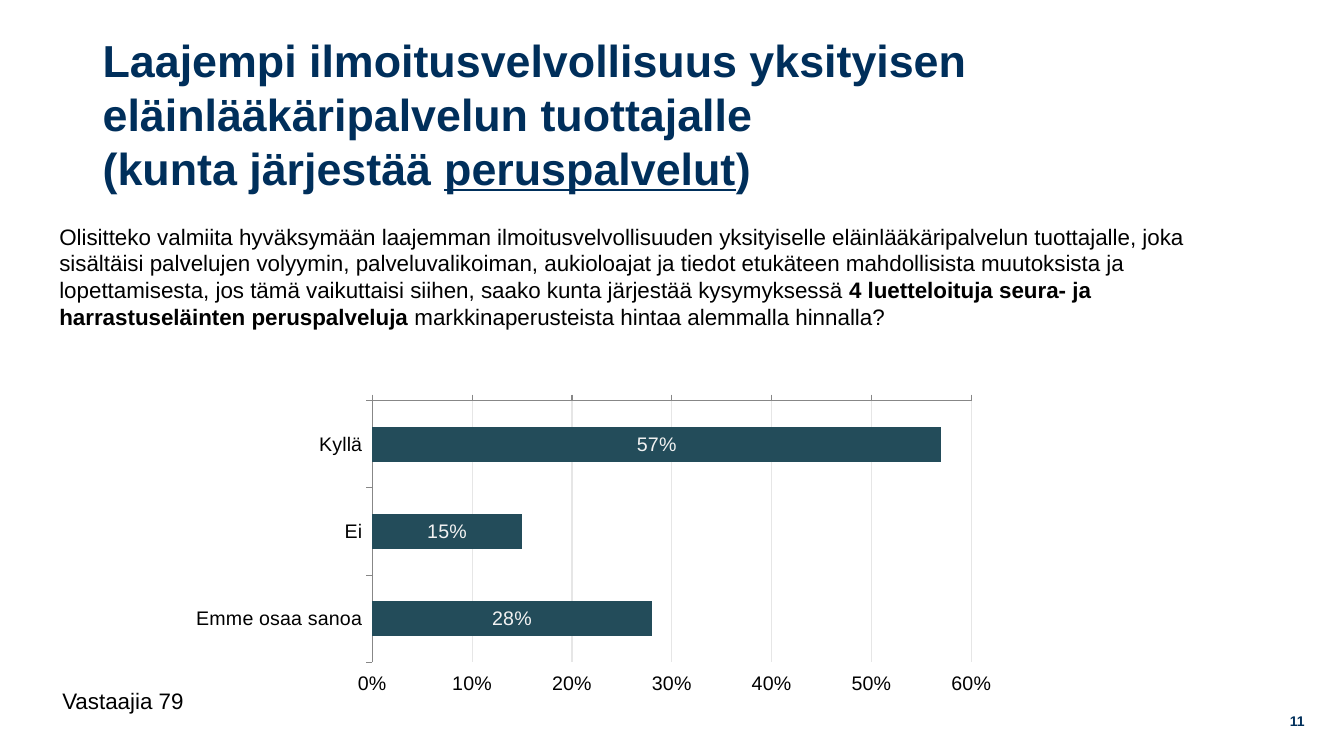
from dataclasses import dataclass

from pptx import Presentation
from pptx.chart.data import CategoryChartData
from pptx.dml.color import RGBColor as Rgb
from pptx.enum import chart as ch, text as tx
from pptx.util import Pt


@dataclass(frozen=True)
class Theme:
    """Colours and type sizes of the slide."""
    font: str = "Arial"
    navy: Rgb = Rgb(0x00, 0x2F, 0x5B)
    black: Rgb = Rgb(0, 0, 0)
    teal: Rgb = Rgb(0x23, 0x4C, 0x5A)
    pale: Rgb = Rgb(0xF2, 0xF2, 0xF2)
    grid: Rgb = Rgb(0xE6, 0xE6, 0xE6)
    axis: Rgb = Rgb(0x87, 0x87, 0x87)
    white: Rgb = Rgb(0xFF, 0xFF, 0xFF)
    head: float = 32
    body: float = 16
    label: float = 14
    small: float = 10


THEME = Theme()


def style(font, size, color, bold=None):
    """Set the face, size, colour and weight of a font."""
    font.name, font.size, font.bold = THEME.font, Pt(size), bold
    font.color.rgb = color


def frame(slide, box, size, color, bold=None, middle=False):
    """Add a wrapped text box and return its first paragraph."""
    area = slide.shapes.add_textbox(*map(Pt, box)).text_frame
    area.word_wrap = True
    area.vertical_anchor = tx.MSO_ANCHOR.MIDDLE if middle else tx.MSO_ANCHOR.TOP
    para = area.paragraphs[0]
    style(para.font, size, color, bold)
    return para


def add_run(para, words):
    """Append words to a paragraph and return the run."""
    run = para.add_run()
    run.text = words
    return run


def add_title(slide, box):
    """Add the heading with its underlined key word."""
    para = frame(slide, box, THEME.head, THEME.navy, True, True)
    add_run(para, "Laajempi ilmoitusvelvollisuus yksityisen eläinlääkäripalvelun tuottajalle")
    para.add_line_break()
    add_run(para, "(kunta järjestää ")
    add_run(para, "peruspalvelut").font.underline = True
    add_run(para, ")")


def add_query(slide, box):
    """Add the survey question with its bold passage."""
    para = frame(slide, box, THEME.body, THEME.black)
    add_run(para, "Olisitteko valmiita hyväksymään laajemman ilmoitusvelvollisuuden "
            "yksityiselle eläinlääkäripalvelun tuottajalle, joka sisältäisi palvelujen "
            "volyymin, palveluvalikoiman, aukioloajat ja tiedot etukäteen mahdollisista "
            "muutoksista ja lopettamisesta, jos tämä vaikuttaisi siihen, saako kunta "
            "järjestää kysymyksessä ")
    add_run(para, "4 luetteloituja seura- ja harrastuseläinten peruspalveluja").font.bold = True
    add_run(para, " markkinaperusteista hintaa alemmalla hinnalla?")


def add_bars(slide, box):
    """Add the bar chart of answer shares."""
    data = CategoryChartData(number_format="0%")
    data.categories = ["Kyllä", "Ei", "Emme osaa sanoa"]
    data.add_series("Series 1", [0.57, 0.15, 0.28])
    chart = slide.shapes.add_chart(ch.XL_CHART_TYPE.BAR_CLUSTERED, *map(Pt, box), data).chart
    chart.has_legend = chart.has_title = False
    style(chart.font, THEME.label, THEME.black)

    cat, val = chart.category_axis, chart.value_axis
    cat.reverse_order = True
    for axis in (cat, val):
        axis.major_tick_mark = ch.XL_TICK_MARK.OUTSIDE
        axis.format.line.color.rgb = THEME.axis
        axis.format.line.width = Pt(0.75)
    val.minimum_scale, val.maximum_scale, val.major_unit = 0, 0.6, 0.1
    val.tick_label_position = ch.XL_TICK_LABEL_POSITION.HIGH
    val.tick_labels.number_format = "0%"
    val.tick_labels.number_format_is_linked = False
    val.major_gridlines.format.line.color.rgb = THEME.grid
    val.major_gridlines.format.line.width = Pt(0.75)

    plot = chart.plots[0]
    plot.gap_width, plot.vary_by_categories = 150, False
    fill = plot.series[0].format.fill
    fill.solid()
    fill.fore_color.rgb = THEME.teal
    plot.has_data_labels = True
    tags = plot.data_labels
    tags.show_value = True
    tags.number_format, tags.number_format_is_linked = "0%", False
    tags.position = ch.XL_LABEL_POSITION.CENTER
    style(tags.font, THEME.label, THEME.pale)


def add_count(slide, box):
    """Add the number of respondents."""
    add_run(frame(slide, box, THEME.body, THEME.black), "Vastaajia 79")


def add_page(slide, box):
    """Add the page number at the right."""
    para = frame(slide, box, THEME.small, THEME.navy, True, True)
    para.alignment = tx.PP_ALIGN.RIGHT
    add_run(para, "11")


def main():
    """Build the slide and save it."""
    deck = Presentation()
    deck.slide_width, deck.slide_height = Pt(960), Pt(540)
    slide = deck.slides.add_slide(deck.slide_layouts[6])
    slide.background.fill.solid()
    slide.background.fill.fore_color.rgb = THEME.white
    add_title(slide, (66.24, 28.8, 766, 104.4))
    add_page(slide, (722.9, 500.4, 216, 28.8))
    add_query(slide, (35.3, 155.5, 828, 85))
    add_bars(slide, (128.2, 281.5, 591.8, 218.9))
    add_count(slide, (37.4, 487.4, 107.3, 26.6))
    deck.save("out.pptx")


if __name__ == "__main__":
    main()
